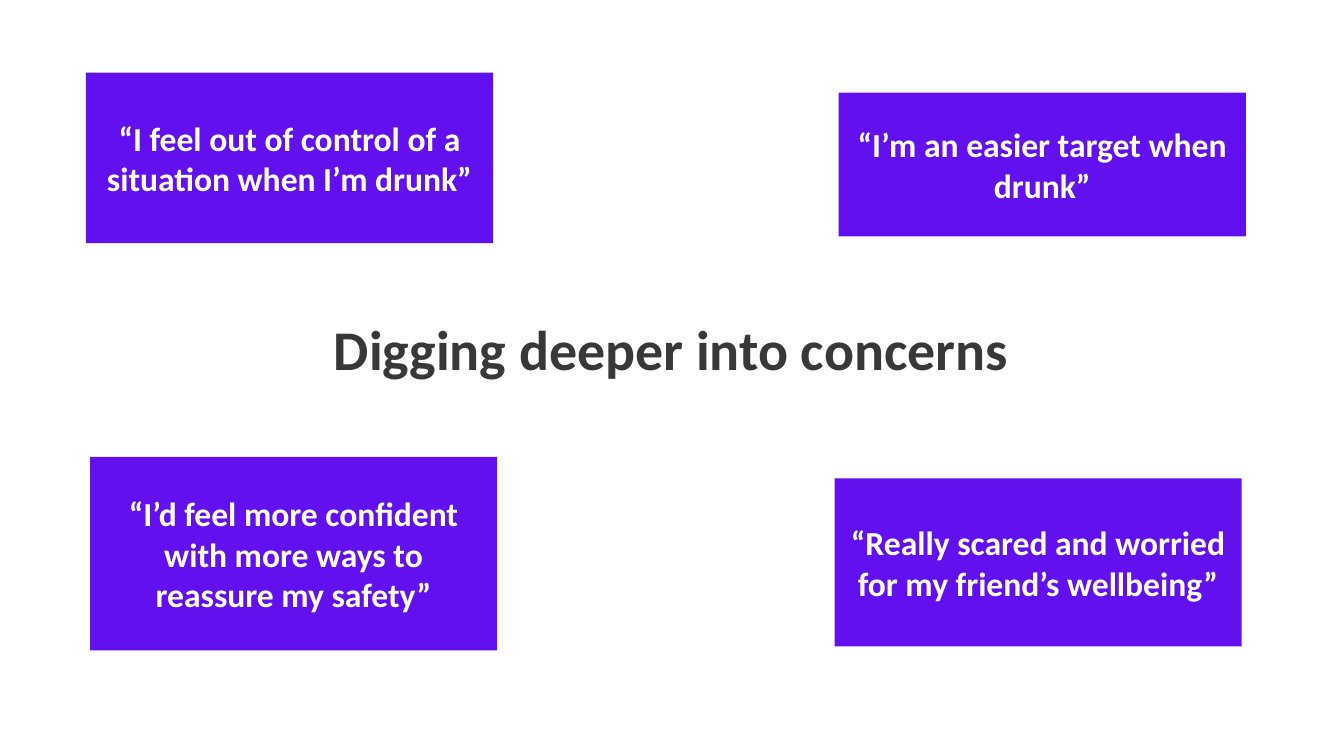
from pptx import Presentation
from pptx.dml.color import RGBColor
from pptx.enum.shapes import MSO_SHAPE as Shape
from pptx.enum.text import MSO_ANCHOR as Anchor, MSO_AUTO_SIZE as AutoSize, PP_ALIGN as Align
from pptx.util import Inches, Pt

COLORS = {"purple": "6211EE", "white": "FFFFFF", "charcoal": "383838"}
QUOTE_WIDTH = 3.03


def write_text(box, text, size, color, anchor):
    frame = box.text_frame
    margins = {f"margin_{side}": Inches(0.1) for side in ("left", "top", "right", "bottom")}
    layout = {"word_wrap": True, "auto_size": AutoSize.NONE, "vertical_anchor": anchor}
    for name, value in {**margins, **layout}.items():
        setattr(frame, name, value)
    para = frame.paragraphs[0]
    para.alignment = Align.CENTER
    span = para.add_run()
    span.text = text
    for name, value in {"name": "Calibri", "size": Pt(size), "bold": True}.items():
        setattr(span.font, name, value)
    span.font.color.rgb = RGBColor.from_string(COLORS[color])


deck = Presentation()
deck.slide_width = Inches(10)
deck.slide_height = deck.slide_width * 9 // 16
page = deck.slides.add_slide(deck.slide_layouts[5])

title = page.shapes.title
place = {"left": 1.51, "top": 2.24, "width": 6.97, "height": 0.58}
for name, value in place.items():
    setattr(title, name, Inches(value))
write_text(title, "Digging deeper into concerns", 30, "charcoal", Anchor.TOP)

# Left, top, height and wording of each quote
quotes = [
    (0.64, 0.54, 1.27, "“I feel out of control of a situation when I’m drunk”"),
    (6.24, 0.69, 1.07, "“I’m an easier target when drunk”"),
    (6.21, 3.56, 1.25, "“Really scared and worried for my friend’s wellbeing”"),
    (0.67, 3.4, 1.44, "“I’d feel more confident with more ways to reassure my safety”"),
]
for left, top, height, quote in quotes:
    edges = [Inches(value) for value in (left, top, QUOTE_WIDTH, height)]
    box = page.shapes.add_shape(Shape.RECTANGLE, *edges)
    box.shadow.inherit = False
    box.fill.solid()
    box.fill.fore_color.rgb = RGBColor.from_string(COLORS["purple"])
    box.line.fill.background()
    write_text(box, quote, 18, "white", Anchor.MIDDLE)

deck.save("out.pptx")
